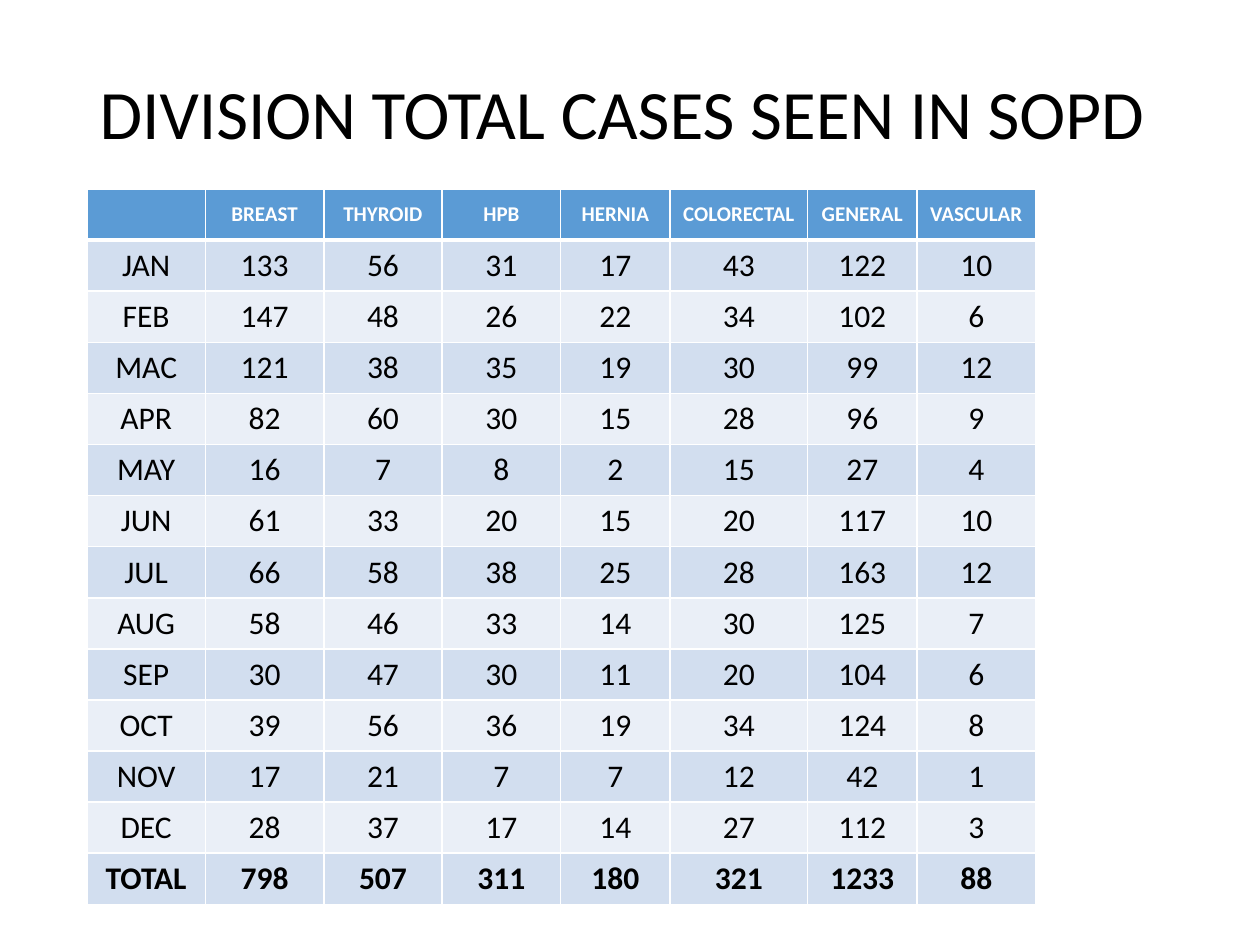
from lxml import etree
from pptx import Presentation
from pptx.dml.color import RGBColor
from pptx.enum.text import MSO_ANCHOR, PP_ALIGN
from pptx.oxml.ns import qn
from pptx.util import Inches, Pt

MIDDLE = MSO_ANCHOR.MIDDLE
LEFT, CENTER = PP_ALIGN.LEFT, PP_ALIGN.CENTER

FONT = "Calibri"
BLACK = RGBColor(0x00, 0x00, 0x00)
WHITE = RGBColor(0xFF, 0xFF, 0xFF)
HEADER_BLUE = RGBColor(0x5B, 0x9B, 0xD5)
BAND_DARK = RGBColor(0xD2, 0xDE, 0xEF)
BAND_LIGHT = RGBColor(0xEA, 0xEF, 0xF7)

COLUMN_WIDTHS = [0.94, 0.94, 0.94, 0.94, 0.87, 1.09, 0.87, 0.94]
CASES = [
    ["", "BREAST", "THYROID", "HPB", "HERNIA", "COLORECTAL", "GENERAL", "VASCULAR"],
    ["JAN", 133, 56, 31, 17, 43, 122, 10],
    ["FEB", 147, 48, 26, 22, 34, 102, 6],
    ["MAC", 121, 38, 35, 19, 30, 99, 12],
    ["APR", 82, 60, 30, 15, 28, 96, 9],
    ["MAY", 16, 7, 8, 2, 15, 27, 4],
    ["JUN", 61, 33, 20, 15, 20, 117, 10],
    ["JUL", 66, 58, 38, 25, 28, 163, 12],
    ["AUG", 58, 46, 33, 14, 30, 125, 7],
    ["SEP", 30, 47, 30, 11, 20, 104, 6],
    ["OCT", 39, 56, 36, 19, 34, 124, 8],
    ["NOV", 17, 21, 7, 7, 12, 42, 1],
    ["DEC", 28, 37, 17, 14, 27, 112, 3],
    ["TOTAL", 798, 507, 311, 180, 321, 1233, 88],
]


def format_paragraph(paragraph, size, color, bold, alignment):
    paragraph.alignment = alignment
    font = paragraph.font
    font.name, font.size, font.bold = FONT, Pt(size), bold
    font.color.rgb = color


def add_title(slide, left, top, width, height):
    title = slide.shapes.title
    title.left, title.top, title.width, title.height = left, top, width, height
    frame = title.text_frame
    frame.text = "DIVISION TOTAL CASES SEEN IN SOPD"
    frame.word_wrap = True
    frame.vertical_anchor = MIDDLE
    heading = frame.paragraphs[0]
    heading.line_spacing = 0.9
    format_paragraph(heading, 39.6, BLACK, False, LEFT)


def set_borders(cell, top, bottom):
    """White rules: 1 pt at the sides, given point widths above and below."""
    properties = cell._tc.get_or_add_tcPr()
    for side, points in (("L", 1), ("R", 1), ("T", top), ("B", bottom)):
        line = etree.SubElement(properties, qn(f"a:ln{side}"), w=str(Pt(points)))
        fill = etree.SubElement(line, qn("a:solidFill"))
        etree.SubElement(fill, qn("a:srgbClr"), val=str(WHITE))


def add_cases_table(slide, left, top, width, height):
    row_count = len(CASES)
    table = slide.shapes.add_table(
        row_count, len(COLUMN_WIDTHS), left, top, width, height).table
    for column, column_width in zip(table.columns, COLUMN_WIDTHS):
        column.width = Inches(column_width)

    for row_index, values in enumerate(CASES):
        table.rows[row_index].height = height // row_count
        is_header = row_index == 0
        is_total = row_index == row_count - 1
        band = BAND_DARK if row_index % 2 else BAND_LIGHT
        for column_index, value in enumerate(values):
            cell = table.cell(row_index, column_index)
            # A heavier rule parts the header from the months
            set_borders(cell, top=3 if row_index == 1 else 1,
                        bottom=3 if is_header else 1)
            cell.fill.solid()
            cell.fill.fore_color.rgb = HEADER_BLUE if is_header else band
            cell.vertical_anchor = MIDDLE
            cell.margin_left = cell.margin_right = Inches(0.05)
            cell.margin_top = cell.margin_bottom = Inches(0.04)
            cell.text = str(value)
            format_paragraph(cell.text_frame.paragraphs[0],
                             12 if is_header else 18,
                             WHITE if is_header else BLACK,
                             is_header or is_total, CENTER)


def main():
    presentation = Presentation()
    presentation.slide_width = Inches(10)
    presentation.slide_height = Inches(7.5)
    title_only = presentation.slide_layouts[5]
    slide = presentation.slides.add_slide(title_only)
    add_title(slide, Inches(0.69), Inches(0.51), Inches(8.62), Inches(0.84))
    add_cases_table(slide, Inches(0.69), Inches(1.5), Inches(7.53), Inches(5.68))
    presentation.save("out.pptx")


if __name__ == "__main__":
    main()
